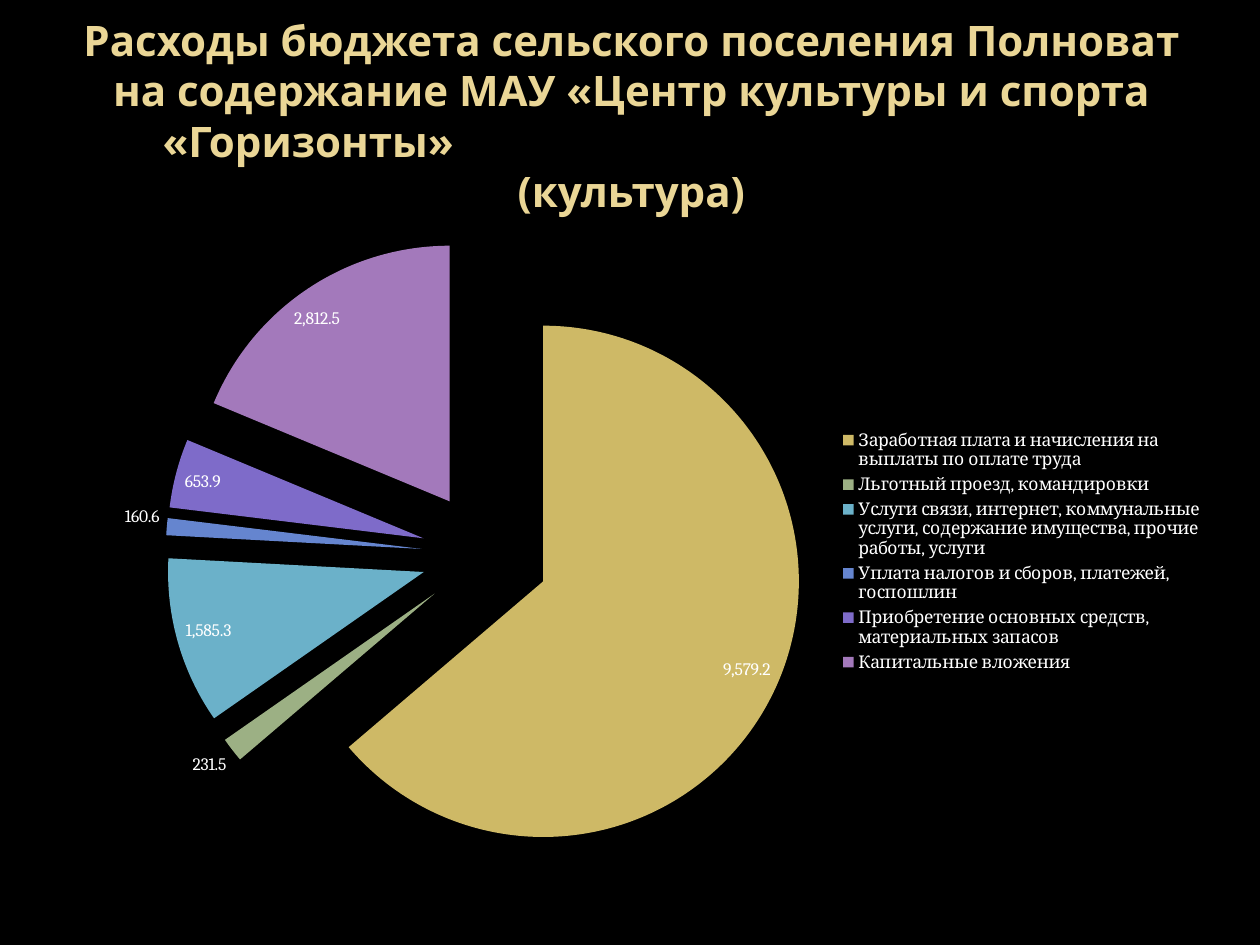
"""Build a slide with an exploded pie of culture centre expenses."""
from lxml import etree
from pptx import Presentation, util as u
from pptx.chart.data import CategoryChartData
from pptx.dml.color import RGBColor
from pptx.enum import chart as ch, text
from pptx.oxml import ns

TITLE = [
    ("Расходы бюджета сельского поселения Полноват на содержание МАУ "
     "«Центр культуры и спорта", text.PP_ALIGN.CENTER, 0),
    ("«Горизонты»", text.PP_ALIGN.LEFT, 0.68),
    ("(культура)", text.PP_ALIGN.CENTER, 0),
]
EXPENSES = [
    ("Заработная плата и начисления на выплаты по оплате труда", 9579.2, "CEB966"),
    ("Льготный проезд, командировки", 231.5, "9CB084"),
    ("Услуги связи, интернет, коммунальные услуги, содержание имущества, "
     "прочие работы, услуги", 1585.3, "6BB1C9"),
    ("Уплата налогов и сборов, платежей, госпошлин", 160.6, "6585CF"),
    ("Приобретение основных средств, материальных запасов", 653.9, "7E6BC9"),
    ("Капитальные вложения", 2812.5, "A379BB"),
]
PLOT = {"x": 0.08, "y": 0.03, "w": 0.56, "h": 0.95}
EXPLOSION = 25


def paint(fill, color):
    fill.solid()
    fill.fore_color.rgb = RGBColor.from_string(color)


def place(sp, left, top, width, height):
    sp.left, sp.top = u.Inches(left), u.Inches(top)
    sp.width, sp.height = u.Inches(width), u.Inches(height)


def add_title(s):
    sp = s.shapes.title
    place(sp, 0.51, 0.29, 9, 1.25)
    tf = sp.text_frame
    tf.word_wrap = True
    tf.auto_size = text.MSO_AUTO_SIZE.NONE
    tf.vertical_anchor = text.MSO_ANCHOR.MIDDLE
    for i, (line, align, indent) in enumerate(TITLE):
        p = tf.add_paragraph() if i else tf.paragraphs[0]
        p.alignment = align
        p.space_before = u.Pt(0)
        p.line_spacing = 1.0
        p._p.get_or_add_pPr().set("marL", str(u.Inches(indent)))
        r = p.add_run()
        r.text = line
        r.font.name, r.font.size, r.font.bold = "Noto Sans", u.Pt(24), True
        paint(r.font.fill, "EAD696")


def set_plot_layout(chart):
    area = chart._chartSpace.chart.plotArea
    for old in area.findall(ns.qn("c:layout")):
        area.remove(old)
    layout = etree.Element(ns.qn("c:layout"))
    manual = etree.SubElement(layout, ns.qn("c:manualLayout"))
    rules = {"layoutTarget": "inner", "xMode": "edge", "yMode": "edge", **PLOT}
    for tag, val in rules.items():
        etree.SubElement(manual, ns.qn("c:" + tag)).set("val", str(val))
    area.insert(0, layout)


def add_pie(s):
    data = CategoryChartData(number_format="#,##0.0")
    data.categories = [name for name, _, _ in EXPENSES]
    data.add_series("Series 1", [value for _, value, _ in EXPENSES])
    box = [u.Inches(v) for v in (0.59, 1.7, 9.06, 5.35)]
    chart = s.shapes.add_chart(ch.XL_CHART_TYPE.PIE, *box, data).chart
    chart.has_title = False
    chart.font.name, chart.font.size = "Cambria", u.Pt(10)
    paint(chart.font.fill, "FFFFFF")
    chart.has_legend = True
    chart.legend.position = ch.XL_LEGEND_POSITION.RIGHT
    chart.legend.include_in_layout = False
    set_plot_layout(chart)
    plot = chart.plots[0]
    plot.vary_by_categories = True
    series = plot.series[0]
    for i, (_, _, color) in enumerate(EXPENSES):
        paint(series.points[i].format.fill, color)
    explosion = etree.Element(ns.qn("c:explosion"))
    explosion.set("val", str(EXPLOSION))
    series._element.find(ns.qn("c:dPt")).addprevious(explosion)
    labels = series.data_labels
    labels.show_value = True
    labels.number_format, labels.number_format_is_linked = "#,##0.0", False
    labels.position = ch.XL_LABEL_POSITION.BEST_FIT


def main():
    prs = Presentation()
    prs.slide_width, prs.slide_height = u.Inches(10), u.Inches(7.5)
    s = prs.slides.add_slide(prs.slide_layouts[5])
    paint(s.background.fill, "000000")
    add_title(s)
    add_pie(s)
    prs.save("out.pptx")


if __name__ == "__main__":
    main()
